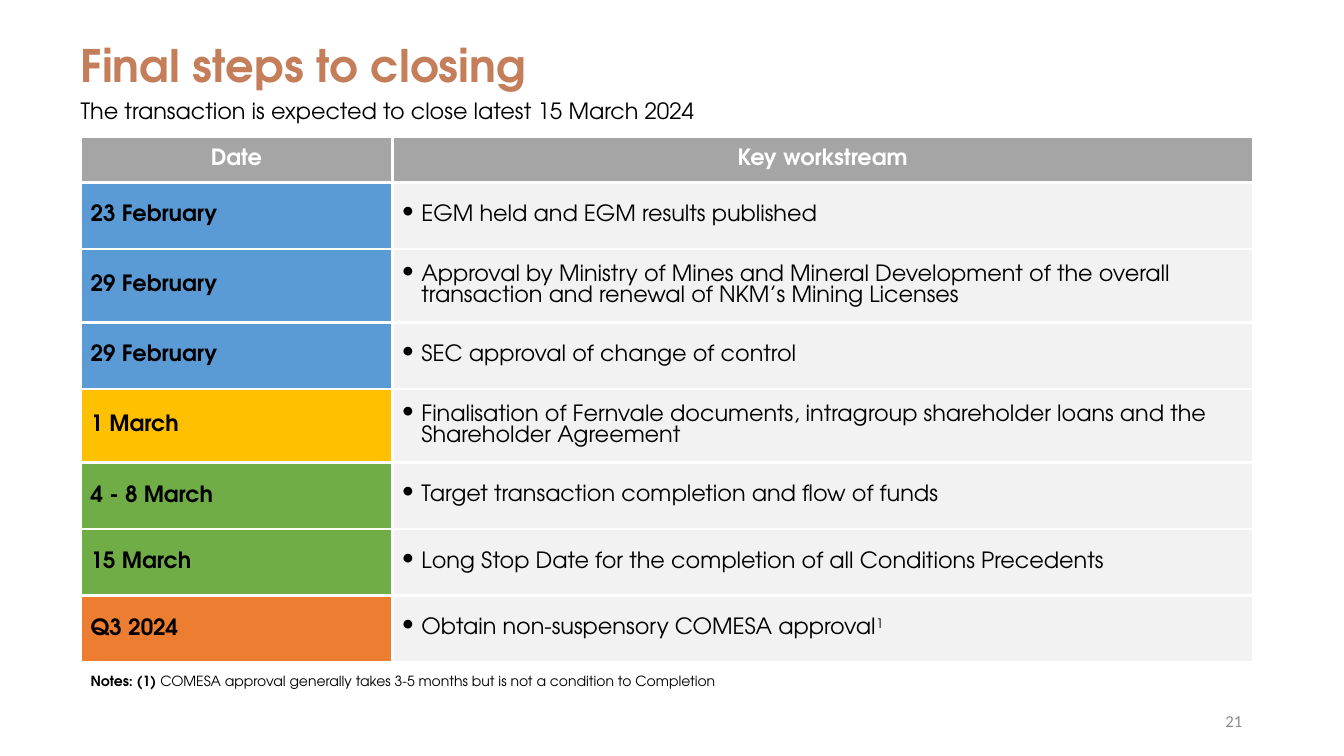
from lxml import etree
from pptx import Presentation
from pptx.dml.color import RGBColor
from pptx.enum.text import MSO_ANCHOR, MSO_AUTO_SIZE, PP_ALIGN
from pptx.oxml.ns import qn
from pptx.util import Emu, Pt

MIDDLE, TOP = MSO_ANCHOR.MIDDLE, MSO_ANCHOR.TOP
LEFT, CENTER, RIGHT = PP_ALIGN.LEFT, PP_ALIGN.CENTER, PP_ALIGN.RIGHT
NO_AUTOFIT = MSO_AUTO_SIZE.NONE

FONT = "TeX Gyre Adventor"
BLACK, WHITE = "000000", "FFFFFF"
HEADER_GREY, ROW_GREY, NUMBER_GREY = "A5A5A5", "F2F2F2", "8C8C8C"
BLUE, YELLOW, GREEN, ORANGE = "5B9BD5", "FFC000", "70AD47", "ED7D31"
COPPER = "C47E5A"

COLUMN_WIDTHS = (309, 854)
HEADER_HEIGHT, ONE_LINE, TWO_LINES = 45, 66, 73

# Date, date colour, row height, workstream, footnote mark
STEPS = [
    ("23 February", BLUE, ONE_LINE, "EGM held and EGM results published", ""),
    ("29 February", BLUE, TWO_LINES,
     "Approval by Ministry of Mines and Mineral Development of the overall "
     "transaction and renewal of NKM’s Mining Licenses", ""),
    ("29 February", BLUE, ONE_LINE, "SEC approval of change of control", ""),
    ("1 March", YELLOW, TWO_LINES,
     "Finalisation of Fernvale documents, intragroup shareholder loans and the "
     "Shareholder Agreement", ""),
    ("4 - 8 March", GREEN, ONE_LINE, "Target transaction completion and flow of funds", ""),
    ("15 March", GREEN, ONE_LINE,
     "Long Stop Date for the completion of all Conditions Precedents", ""),
    ("Q3 2024", ORANGE, ONE_LINE, "Obtain non-suspensory COMESA approval", "1"),
]


def px(length):
    """100 px make one inch."""
    return Emu(length * 9144)


def color(hex_string):
    return RGBColor.from_string(hex_string)


def add_run(paragraph, text, size, hex_string=BLACK, bold=False, font=FONT):
    run = paragraph.add_run()
    run.text = text
    run.font.name = font
    run.font.size = Pt(size)
    run.font.bold = bold
    run.font.color.rgb = color(hex_string)
    return run


def place(shape, box):
    shape.left, shape.top, shape.width, shape.height = map(px, box)


def set_frame(frame, anchor, margins):
    frame.word_wrap = True
    frame.auto_size = NO_AUTOFIT
    frame.vertical_anchor = anchor
    (frame.margin_left, frame.margin_top,
     frame.margin_right, frame.margin_bottom) = map(px, margins)


def set_bullet(paragraph, indent, character=None):
    properties = paragraph._p.get_or_add_pPr()
    properties.set("marL", str(px(indent)))
    properties.set("indent", str(-px(indent)))
    if character:
        etree.SubElement(properties, qn("a:buSzPct"), val="150000")
        etree.SubElement(properties, qn("a:buChar"), char=character)
    else:
        etree.SubElement(properties, qn("a:buNone"))


def add_heading(slide, box):
    left, top, width, height = box

    # Title
    title = slide.shapes.title
    place(title, (left, top, width, 35))
    set_frame(title.text_frame, MIDDLE, (0, 5, 10, 5))
    paragraph = title.text_frame.paragraphs[0]
    paragraph.alignment = LEFT
    paragraph.line_spacing = 0.9
    add_run(paragraph, "Final steps to closing", 32, COPPER, True)

    # Subtitle
    body = slide.placeholders[1]
    place(body, (left, top + 49, width - 66, height - 49))
    set_frame(body.text_frame, TOP, (0, 0, 0, 0))
    paragraph = body.text_frame.paragraphs[0]
    set_bullet(paragraph, 0)
    paragraph.line_spacing = 0.9
    paragraph.space_before = Pt(0)
    add_run(paragraph, "The transaction is expected to close latest 15 March 2024", 16)


def format_cell(cell, fill):
    cell.fill.solid()
    cell.fill.fore_color.rgb = color(fill)
    cell.vertical_anchor = MIDDLE
    cell.margin_left = cell.margin_right = px(10)
    cell.margin_top = cell.margin_bottom = px(8)
    # White borders come before the fill in the cell properties
    properties = cell._tc.get_or_add_tcPr()
    for position, side in enumerate(("lnL", "lnR", "lnT", "lnB")):
        line = etree.Element(qn("a:" + side), w=str(Pt(2.25)))
        solid = etree.SubElement(line, qn("a:solidFill"))
        etree.SubElement(solid, qn("a:srgbClr"), val=WHITE)
        properties.insert(position, line)
    return cell.text_frame.paragraphs[0]


def add_steps_table(slide, box):
    frame = slide.shapes.add_table(len(STEPS) + 1, len(COLUMN_WIDTHS), *map(px, box))
    table = frame.table
    table.horz_banding = False
    for column, width in zip(table.columns, COLUMN_WIDTHS):
        column.width = px(width)

    # Header row
    table.rows[0].height = px(HEADER_HEIGHT)
    for index, heading in enumerate(("Date", "Key workstream")):
        paragraph = format_cell(table.cell(0, index), HEADER_GREY)
        paragraph.alignment = CENTER
        add_run(paragraph, heading, 16, WHITE, True)

    # One row per step
    for row, (date, fill, height, workstream, mark) in enumerate(STEPS, 1):
        table.rows[row].height = px(height)
        add_run(format_cell(table.cell(row, 0), fill), date, 16, bold=True)
        paragraph = format_cell(table.cell(row, 1), ROW_GREY)
        set_bullet(paragraph, 19, "•")
        add_run(paragraph, workstream, 16)
        if mark:
            footnote = add_run(paragraph, mark, 16)
            footnote._r.get_or_add_rPr().set("baseline", "30000")


def add_text_box(slide, box, anchor):
    text_box = slide.shapes.add_textbox(*map(px, box))
    set_frame(text_box.text_frame, anchor, (10, 5, 10, 5))
    return text_box.text_frame.paragraphs[0]


def add_notes_line(slide, box):
    paragraph = add_text_box(slide, box, TOP)
    add_run(paragraph, "Notes: (1) ", 10, bold=True)
    add_run(paragraph, "COMESA approval generally takes 3-5 months but is not "
                       "a condition to Completion", 10)


def add_page_number(slide, box):
    paragraph = add_text_box(slide, box, MIDDLE)
    paragraph.alignment = RIGHT
    add_run(paragraph, "21", 12, NUMBER_GREY, font="Calibri")


def main():
    presentation = Presentation()
    presentation.slide_width, presentation.slide_height = px(1333), px(750)
    slide = presentation.slides.add_slide(presentation.slide_layouts[1])
    add_heading(slide, (80, 50, 1129, 110))
    add_steps_table(slide, (80, 136, sum(COLUMN_WIDTHS), 521))
    add_notes_line(slide, (80, 662, 1053, 55))
    add_page_number(slide, (942, 695, 300, 40))
    presentation.save("out.pptx")


if __name__ == "__main__":
    main()
